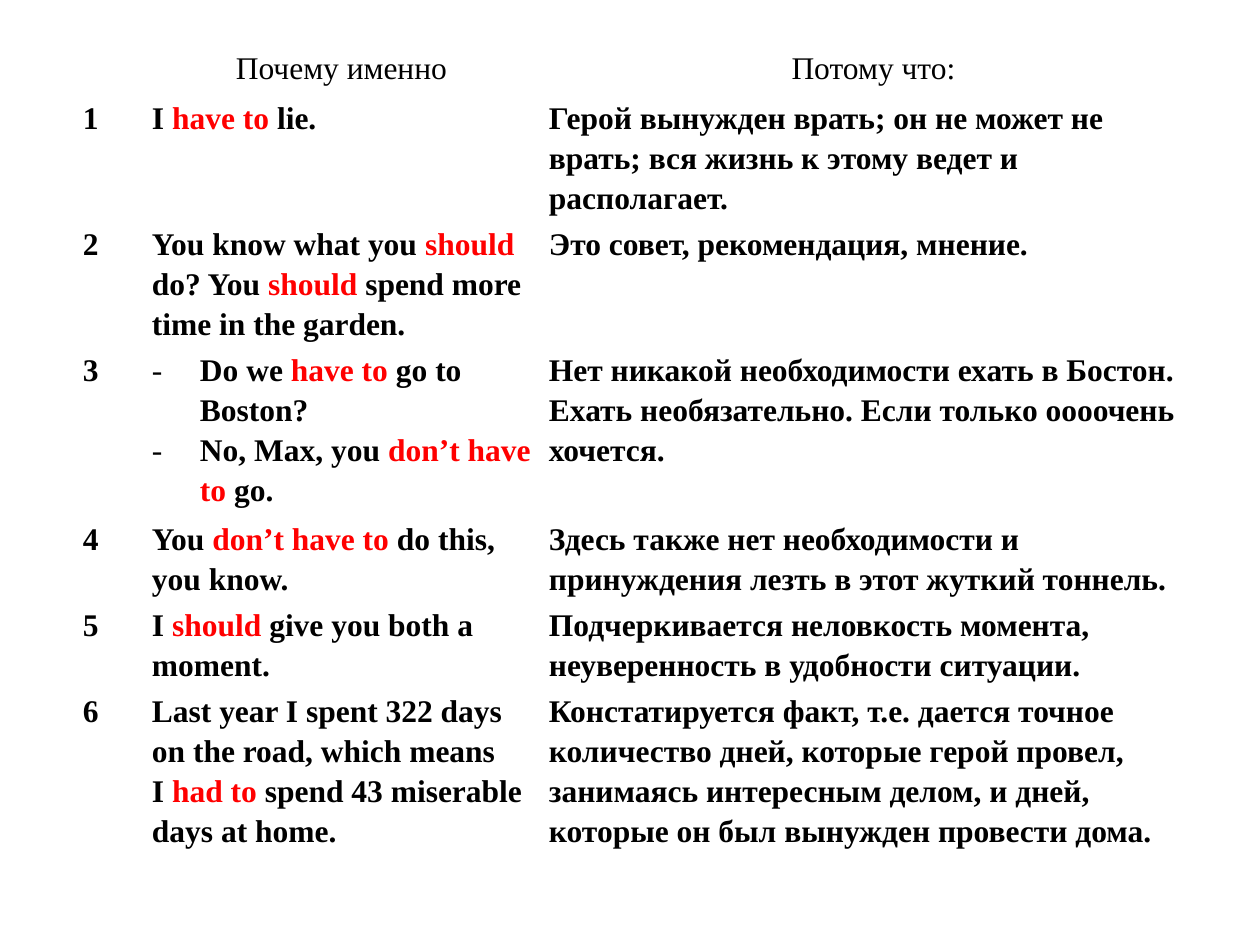
from lxml.etree import SubElement
from pptx import Presentation
from pptx.dml.color import RGBColor
from pptx.enum.text import PP_ALIGN as Align
from pptx.oxml.ns import qn
from pptx.util import Emu, Pt

PX = 914400 / 126
FONT = "Times New Roman"
BLACK = RGBColor(0x00, 0x00, 0x00)
RED = RGBColor(0xFF, 0x00, 0x00)
WHITE = RGBColor(0xFF, 0xFF, 0xFF)

COLUMN_WIDTHS = [69, 397, 667]
ROW_HEIGHTS = [50, 126, 126, 169, 86, 86, 169]
HEADINGS = ["", "Почему именно", "Потому что:"]

# Quote paragraphs and their explanation; *stars* enclose the modal verb,
# a leading "- " marks a line of dialogue
EXAMPLES = [
    (["I *have to* lie."],
     "Герой вынужден врать; он не может не врать; вся жизнь к этому ведет "
     "и располагает."),
    (["You know what you *should* do? You *should* spend more time in the garden."],
     "Это совет, рекомендация, мнение."),
    (["- Do we *have to* go to Boston?", "- No, Max, you *don’t have to* go."],
     "Нет никакой необходимости ехать в Бостон. Ехать необязательно. "
     "Если только оооочень хочется."),
    (["You *don’t have to* do this, you know."],
     "Здесь также нет необходимости и принуждения лезть в этот жуткий тоннель."),
    (["I *should* give you both a moment."],
     "Подчеркивается неловкость момента, неуверенность в удобности ситуации."),
    (["Last year I spent 322 days on the road, which means",
      "I *had to* spend 43 miserable days at home."],
     "Констатируется факт, т.е. дается точное количество дней, которые герой "
     "провел, занимаясь интересным делом, и дней, которые он был вынужден "
     "провести дома."),
]


def px(length):
    return Emu(round(length * PX))


def add_runs(paragraph, text, bold):
    for index, part in enumerate(text.split("*")):
        if part:
            run = paragraph.add_run()
            run.text = part
            run.font.name = FONT
            run.font.size = Pt(18)
            run.font.bold = bold
            run.font.color.rgb = RED if index % 2 else BLACK


def add_dash(paragraph):
    properties = paragraph._p.get_or_add_pPr()
    properties.set("marL", str(px(48)))
    properties.set("indent", str(-px(48)))
    SubElement(properties, qn("a:buFont"), typeface=FONT)
    SubElement(properties, qn("a:buChar"), char="-")


def style_cell(cell, bottom_width=1):
    properties = cell._tc.get_or_add_tcPr()
    for side, width in (("L", 1), ("R", 1), ("T", 1), ("B", bottom_width)):
        border = SubElement(properties, qn(f"a:ln{side}"), w=str(Pt(width)))
        color = SubElement(border, qn("a:solidFill"))
        SubElement(color, qn("a:srgbClr"), val=str(WHITE))
    cell.fill.background()


def fill_heading(cell, heading):
    style_cell(cell, bottom_width=3)
    paragraph = cell.text_frame.paragraphs[0]
    paragraph.alignment = Align.CENTER
    add_runs(paragraph, heading, bold=False)


def fill_body(cell, lines):
    style_cell(cell)
    cell.margin_left = cell.margin_right = px(9)
    cell.margin_top = cell.margin_bottom = 0
    frame = cell.text_frame
    for index, line in enumerate(lines):
        paragraph = frame.add_paragraph() if index else frame.paragraphs[0]
        paragraph.line_spacing = 1.15
        if line.startswith("- "):
            add_dash(paragraph)
        add_runs(paragraph, line.removeprefix("- "), bold=True)


def add_examples_table(slide):
    table = slide.shapes.add_table(
        len(ROW_HEIGHTS), len(COLUMN_WIDTHS), px(74), px(45),
        px(sum(COLUMN_WIDTHS)), px(sum(ROW_HEIGHTS))).table
    for column, width in zip(table.columns, COLUMN_WIDTHS):
        column.width = px(width)
    for row, height in zip(table.rows, ROW_HEIGHTS):
        row.height = px(height)

    # Heading row
    for column, heading in enumerate(HEADINGS):
        fill_heading(table.cell(0, column), heading)

    # Numbered examples
    for number, (quote, reason) in enumerate(EXAMPLES, start=1):
        for column, lines in enumerate(([str(number)], quote, [reason])):
            fill_body(table.cell(number, column), lines)


def main():
    deck = Presentation()
    deck.slide_width, deck.slide_height = px(1260), px(945)
    slide = deck.slides.add_slide(deck.slide_layouts[6])
    add_examples_table(slide)
    deck.save("out.pptx")


if __name__ == "__main__":
    main()
